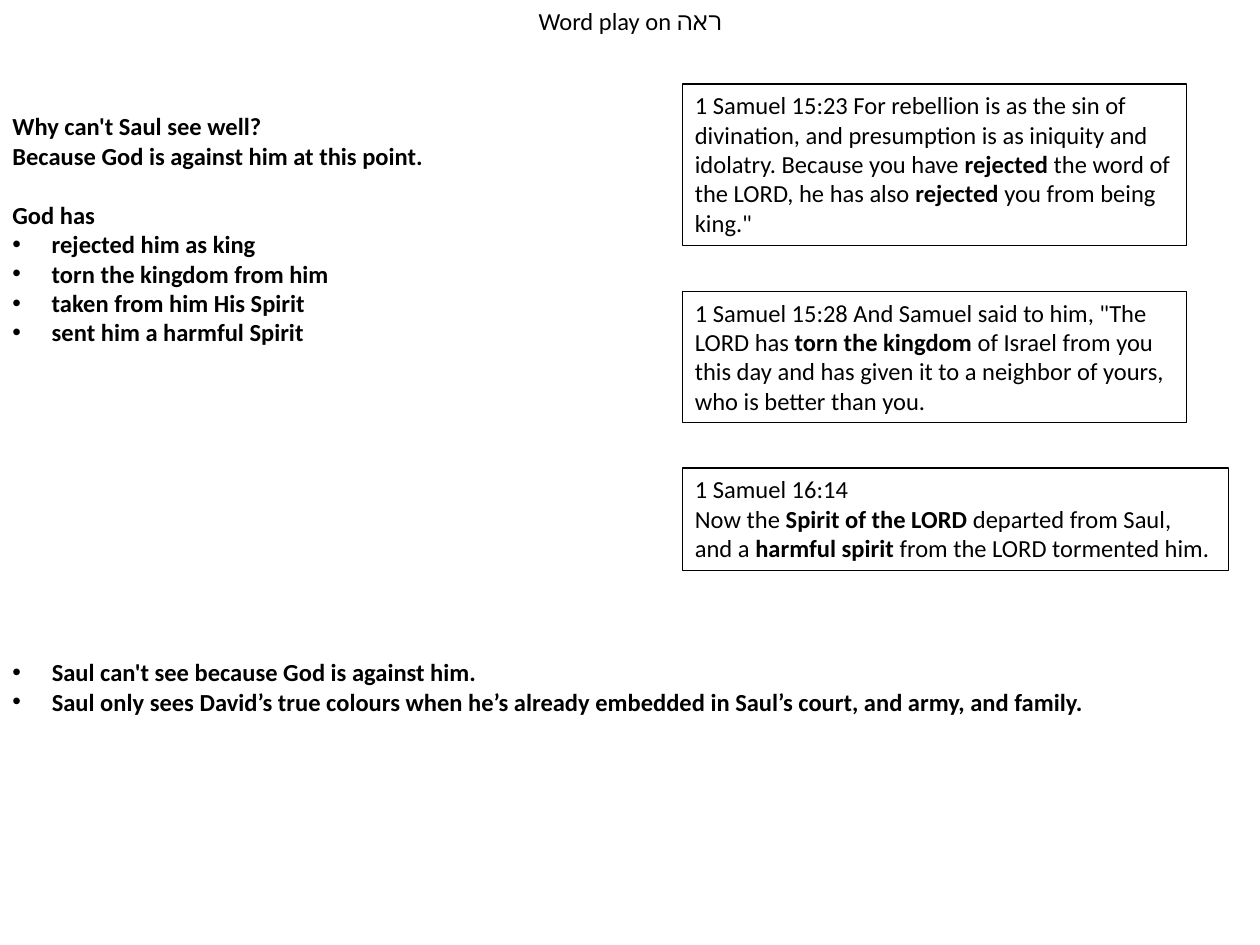
"""Build the slide on why Saul cannot see, with the verses that explain it."""
from dataclasses import dataclass

from lxml import etree
from pptx import Presentation
from pptx.dml.color import RGBColor
from pptx.enum.shapes import MSO_SHAPE
from pptx.enum.text import MSO_ANCHOR, MSO_AUTO_SIZE, PP_ALIGN
from pptx.oxml.ns import qn
from pptx.util import Pt

RECTANGLE = MSO_SHAPE.RECTANGLE
TOP = MSO_ANCHOR.TOP
FIT_SHAPE = MSO_AUTO_SIZE.SHAPE_TO_FIT_TEXT
LEFT, CENTER = PP_ALIGN.LEFT, PP_ALIGN.CENTER

BLACK = "000000"
BODY_FONT, HEBREW_FONT = "Calibri", "Lato"
FONT_SIZE = 14
BULLET_INDENT = 22.5
TITLE_ONLY = 5
VERSE_LEFT, VERSE_TOP, VERSE_GAP = 390, 48, 26


@dataclass(frozen=True)
class Line:
    text: str
    bullet: bool = False
    space_before: float = 0


@dataclass(frozen=True)
class Note:
    top: float
    width: float
    height: float
    lines: tuple[Line, ...]


@dataclass(frozen=True)
class Verse:
    width: float
    height: float
    lines: tuple[Line, ...]


NOTES = (
    Note(60, 318, 143, (
        Line("**Why can't Saul see well?**"),
        Line("**Because God is against him at this point.**"),
        Line("**God has**", space_before=17),
        Line("**rejected him as king**", bullet=True),
        Line("**torn the kingdom from him**", bullet=True),
        Line("**taken from him His Spirit**", bullet=True),
        Line("**sent him a harmful Spirit**", bullet=True),
    )),
    Note(372, 702, 41, (
        Line("**Saul can't see because God is against him.**", bullet=True),
        Line("**Saul only sees David’s true colours when he’s already embedded "
             "in Saul’s court, and army, and family.**", bullet=True),
    )),
)

VERSES = (
    Verse(288, 92.5, (
        Line("1 Samuel 15:23 For rebellion is as the sin of divination, and "
             "presumption is as iniquity and idolatry. Because you have "
             "**rejected** the word of the LORD, he has also **rejected** "
             "you from being king.\""),
    )),
    Verse(288, 75, (
        Line("1 Samuel 15:28 And Samuel said to him, \"The LORD has "
             "**torn the kingdom** of Israel from you this day and has given "
             "it to a neighbor of yours, who is better than you."),
    )),
    Verse(312, 58.5, (
        Line("1 Samuel 16:14"),
        Line("Now the **Spirit of the LORD **departed from Saul,"),
        Line("and a **harmful spirit **from the LORD tormented him."),
    )),
)


def colour(value: str) -> RGBColor:
    """Turn a hex string into a colour."""
    return RGBColor.from_string(value)


def style_paragraph(para, alignment=LEFT) -> None:
    """Give a paragraph the common font and an alignment."""
    para.alignment = alignment
    para.font.name = BODY_FONT
    para.font.size = Pt(FONT_SIZE)
    para.font.color.rgb = colour(BLACK)


def add_bullet(para) -> None:
    """Add a round bullet with a hanging indent."""
    properties = para._p.get_or_add_pPr()
    properties.set("marL", str(Pt(BULLET_INDENT)))
    properties.set("indent", str(-Pt(BULLET_INDENT)))
    font = etree.Element(qn("a:buFont"), typeface="Arial")
    mark = etree.Element(qn("a:buChar"), char="•")
    defaults = properties.find(qn("a:defRPr"))
    defaults.addprevious(font)
    defaults.addprevious(mark)


def write_lines(box, lines: tuple[Line, ...]) -> None:
    """Fill a box with lines, where double asterisks enclose bold text."""
    frame = box.text_frame
    frame.word_wrap = True
    frame.vertical_anchor = TOP
    frame.auto_size = FIT_SHAPE
    for index, line in enumerate(lines):
        para = frame.add_paragraph() if index else frame.paragraphs[0]
        style_paragraph(para)
        para.space_before = Pt(line.space_before)
        if line.bullet:
            add_bullet(para)
        for position, text in enumerate(line.text.split("**")):
            if text:
                span = para.add_run()
                span.text = text
                span.font.bold = position % 2 == 1


def add_title(page) -> None:
    """Place the title and set its Hebrew word in its own font."""
    title = page.shapes.title
    title.left, title.top, title.width, title.height = Pt(276), Pt(0), Pt(168), Pt(24.5)
    frame = title.text_frame
    frame.vertical_anchor = TOP
    frame.auto_size = FIT_SHAPE
    para = frame.paragraphs[0]
    style_paragraph(para, CENTER)
    para.add_run().text = "Word play on "
    hebrew = para.add_run()
    hebrew.text = "ראה"
    hebrew.font.name = HEBREW_FONT
    etree.SubElement(hebrew.font._element, qn("a:cs"), typeface=HEBREW_FONT)


def add_note(page, note: Note) -> None:
    """Draw an unframed note at the left edge."""
    box = page.shapes.add_textbox(Pt(0), Pt(note.top), Pt(note.width), Pt(note.height))
    write_lines(box, note.lines)


def add_verse(page, verse: Verse, top: float) -> None:
    """Draw a framed verse in the right column."""
    box = page.shapes.add_shape(
        RECTANGLE, Pt(VERSE_LEFT), Pt(top), Pt(verse.width), Pt(verse.height))
    box.shadow.inherit = False
    box.fill.background()
    box.line.color.rgb = colour(BLACK)
    box.line.width = Pt(0.75)
    write_lines(box, verse.lines)


def main() -> None:
    """Build and save the deck."""
    deck = Presentation()
    deck.slide_width, deck.slide_height = Pt(720), Pt(540)
    page = deck.slides.add_slide(deck.slide_layouts[TITLE_ONLY])
    add_title(page)
    for note in NOTES:
        add_note(page, note)
    top = VERSE_TOP
    for verse in VERSES:
        add_verse(page, verse, top)
        top += verse.height + VERSE_GAP
    deck.save("out.pptx")


if __name__ == "__main__":
    main()
